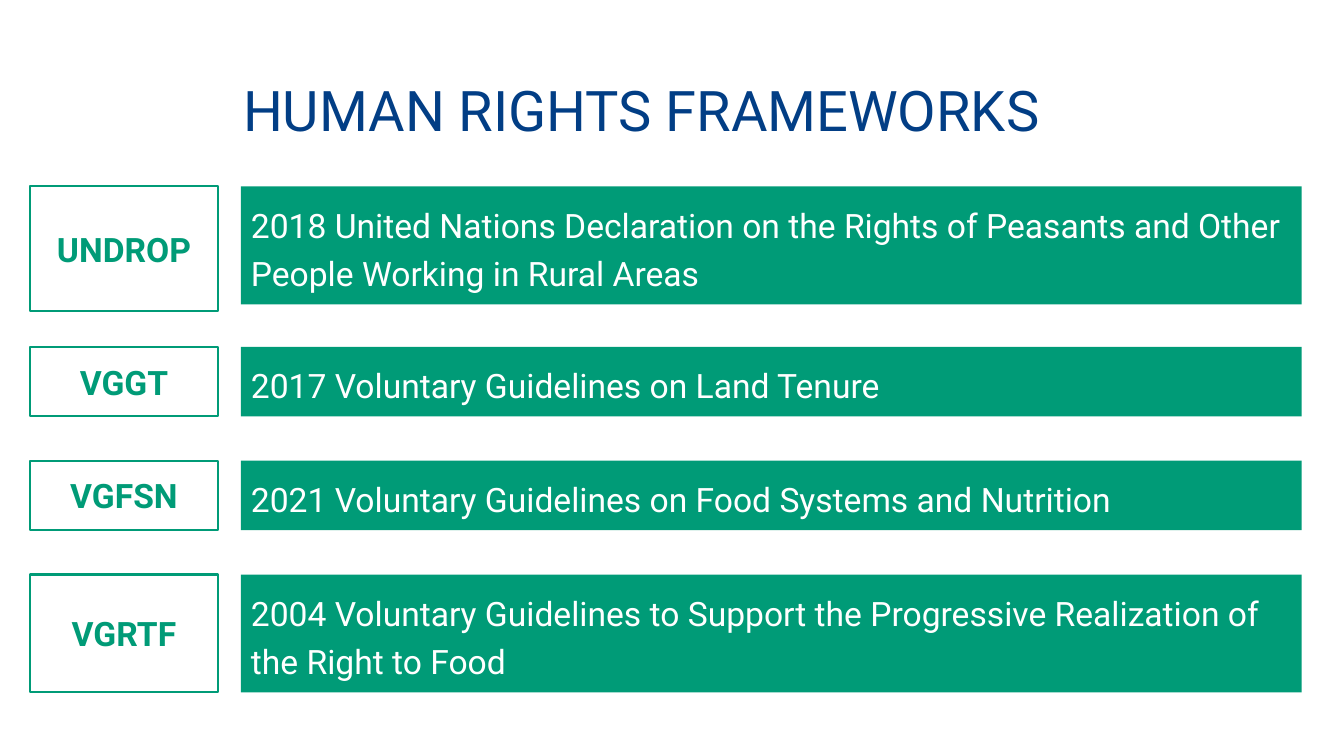
import pptx
import pptx.dml.color
import pptx.enum.shapes
import pptx.enum.text
import pptx.util

EMU_PER_PX = 9144  # 100 px to the inch
FONT = "Roboto"
COLORS = {"navy": "023E85", "green": "009B77", "white": "FFFFFF"}
ALIGN = pptx.enum.text.PP_ALIGN
ANCHOR = pptx.enum.text.MSO_ANCHOR

TAG_LEFT, TAG_WIDTH = 30, 186
BAR_LEFT, BAR_WIDTH = 239, 1052

# top, tag height, bar height, tag, description
FRAMEWORKS = [
    (185, 124, 117, "UNDROP",
     "2018 United Nations Declaration on the Rights of Peasants and Other "
     "People Working in Rural Areas"),
    (344, 69, 69, "VGGT", "2017 Voluntary Guidelines on Land Tenure"),
    (457, 69, 69, "VGFSN",
     "2021 Voluntary Guidelines on Food Systems and Nutrition"),
    (570, 117, 117, "VGRTF",
     "2004 Voluntary Guidelines to Support the Progressive Realization of "
     "the Right to Food"),
]


def px(n):
    return pptx.util.Emu(n * EMU_PER_PX)


def rgb(name):
    return pptx.dml.color.RGBColor.from_string(COLORS[name])


def set_text(sp, text, *, color, size=24, bold=False, align=ALIGN.LEFT,
             anchor=ANCHOR.TOP, spacing=1.0, inset=10):
    tf = sp.text_frame
    tf.word_wrap = True
    tf.vertical_anchor = anchor
    tf.margin_left = tf.margin_right = px(10)
    tf.margin_top = tf.margin_bottom = px(inset)
    p = tf.paragraphs[0]
    p.alignment = align
    p.line_spacing = spacing
    r = p.add_run()
    r.text = text
    r.font.name = FONT
    r.font.size = pptx.util.Pt(size)
    r.font.bold = bold
    r.font.color.rgb = rgb(color)


def add_rect(s, left, top, width, height, fill=None, line=None):
    sp = s.shapes.add_shape(pptx.enum.shapes.MSO_SHAPE.RECTANGLE,
                            px(left), px(top), px(width), px(height))
    sp.shadow.inherit = False
    if fill:
        sp.fill.solid()
        sp.fill.fore_color.rgb = rgb(fill)
    else:
        sp.fill.background()
    if line:
        sp.line.color.rgb = rgb(line)
        sp.line.width = pptx.util.Pt(1.5)
    else:
        sp.line.fill.background()
    return sp


def add_title(s, text):
    sp = s.shapes.add_textbox(px(30), px(40), px(1212), px(145))
    set_text(sp, text, color="navy", size=40, align=ALIGN.CENTER,
             anchor=ANCHOR.MIDDLE, spacing=0.9, inset=5)


def add_bar(s, top, height, text):
    sp = add_rect(s, BAR_LEFT, top, BAR_WIDTH, height, fill="green")
    set_text(sp, text, color="white", spacing=1.2)
    sp.text_frame.auto_size = pptx.enum.text.MSO_AUTO_SIZE.SHAPE_TO_FIT_TEXT


def add_tag(s, top, height, text):
    sp = add_rect(s, TAG_LEFT, top, TAG_WIDTH, height, line="green")
    set_text(sp, text, color="green", bold=True, align=ALIGN.CENTER,
             anchor=ANCHOR.MIDDLE)


def main():
    prs = pptx.Presentation()
    prs.slide_width, prs.slide_height = px(1333), px(750)
    s = prs.slides.add_slide(prs.slide_layouts[6])
    add_title(s, "HUMAN RIGHTS FRAMEWORKS")
    for top, tag_height, bar_height, tag, description in FRAMEWORKS:
        add_bar(s, top, bar_height, description)
        add_tag(s, top, tag_height, tag)
    prs.save("out.pptx")


if __name__ == "__main__":
    main()
